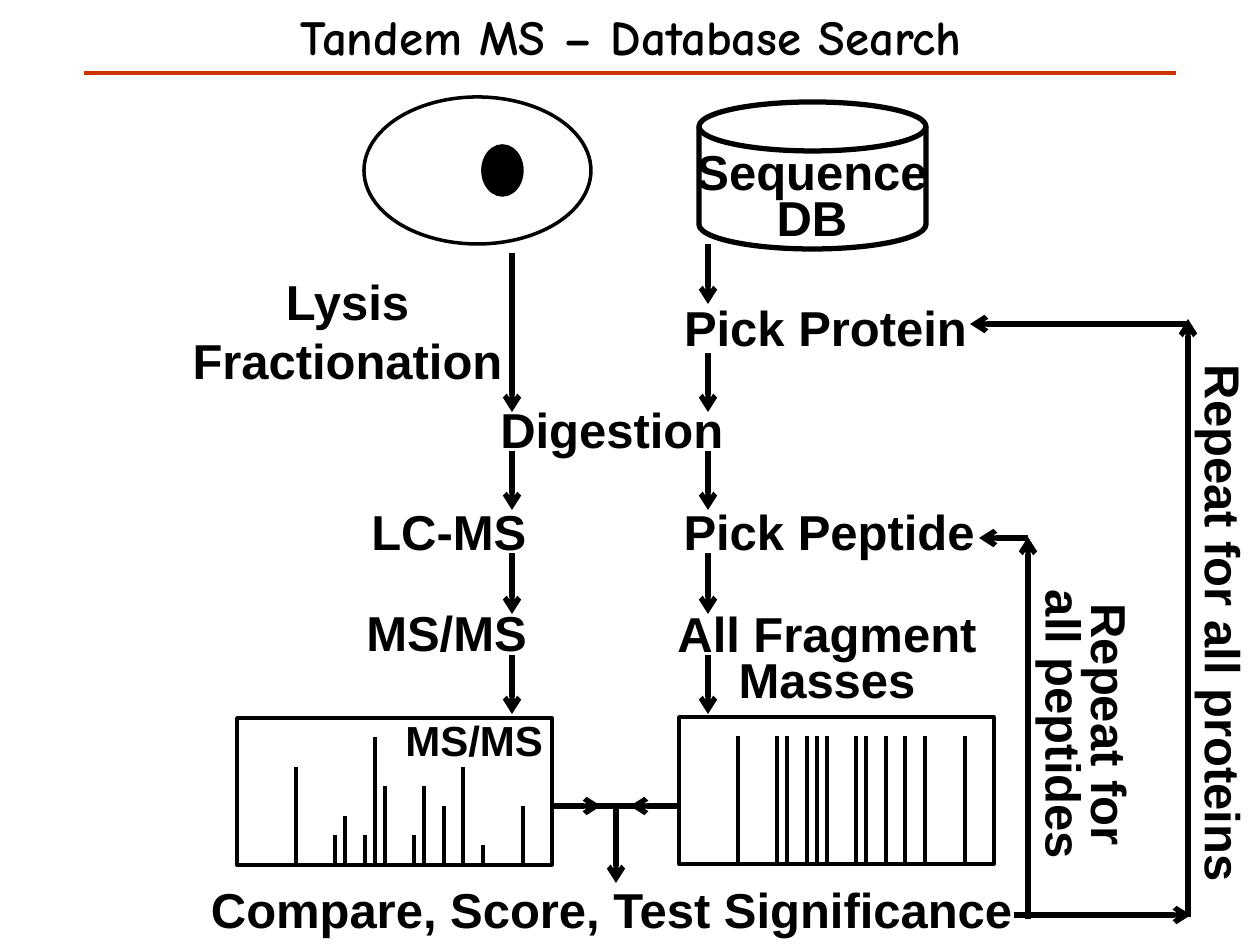
from dataclasses import dataclass

from lxml.etree import SubElement
from pptx import Presentation
from pptx.dml.color import RGBColor
from pptx.enum.shapes import MSO_CONNECTOR, MSO_SHAPE
from pptx.enum.text import MSO_ANCHOR, MSO_AUTO_SIZE, PP_ALIGN
from pptx.oxml.ns import qn
from pptx.util import Emu, Pt

PX = 914400 // 126  # EMU in one px


@dataclass(frozen=True)
class Theme:
    ink: RGBColor = RGBColor(0, 0, 0)
    rule: RGBColor = RGBColor(0xCC, 0x33, 0x00)
    font: str = "Arial"
    title_font: str = "Comic Neue"
    size: int = 28
    small: int = 24
    tight: int = 26
    thin: float = 2
    medium: float = 2.5
    thick: float = 3


def px(*lengths):
    return [Emu(n * PX) for n in lengths]


def write(tf, text, *, font, size, color, align=PP_ALIGN.CENTER, spacing=None):
    """Fill a text frame, one paragraph for each line of text."""
    tf.word_wrap = False
    tf.auto_size = MSO_AUTO_SIZE.SHAPE_TO_FIT_TEXT
    tf.vertical_anchor = MSO_ANCHOR.TOP
    for i, line in enumerate(text.split("\n")):
        p = tf.add_paragraph() if i else tf.paragraphs[0]
        p.alignment = align
        if spacing:
            p.line_spacing = Pt(spacing)
        r = p.add_run()
        r.text = line
        r.font.name, r.font.size, r.font.bold = font, Pt(size), True
        r.font.color.rgb = color


class Diagram:
    def __init__(self, slide, theme):
        self.s, self.theme = slide, theme

    def title(self, text, *box):
        sp = self.s.shapes.title
        sp.left, sp.top, sp.width, sp.height = px(*box)
        write(sp.text_frame, text, font=self.theme.title_font,
              size=self.theme.size, color=self.theme.ink)

    def label(self, text, *box, rotation=0, size=None, **fmt):
        sp = self.s.shapes.add_textbox(*px(*box))
        sp.rotation = rotation
        write(sp.text_frame, text, font=self.theme.font,
              size=size or self.theme.size, color=self.theme.ink, **fmt)

    def shape(self, kind, *box, width=None, filled=False):
        sp = self.s.shapes.add_shape(kind, *px(*box))
        sp.shadow.inherit = False
        if filled:
            sp.fill.solid()
            sp.fill.fore_color.rgb = self.theme.ink
        else:
            sp.fill.background()
        sp.line.color.rgb = self.theme.ink
        sp.line.width = Pt(width or self.theme.thin)

    def line(self, *ends, width=None, color=None, arrow=False):
        cxn = self.s.shapes.add_connector(MSO_CONNECTOR.STRAIGHT, *px(*ends))
        cxn.line.color.rgb = color or self.theme.ink
        cxn.line.width = Pt(width or self.theme.thick)
        if arrow:
            SubElement(cxn.line._get_or_add_ln(), qn("a:tailEnd"), type="arrow")
        SubElement(cxn._element.spPr, qn("a:effectLst"))

    def arrow(self, *ends):
        self.line(*ends, arrow=True)

    def spectrum(self, left, top, peaks):
        """Framed spectrum; peaks maps slot to height, both in steps."""
        width, height, margin, step = 315, 147, 59, 9.85
        self.shape(MSO_SHAPE.RECTANGLE, left, top, width, height)
        base = top + height
        for slot, steps in peaks.items():
            x = left + margin + round(slot * step)
            self.line(x, base - round(steps * step), x, base,
                      width=self.theme.thin)


def main():
    theme = Theme()
    prs = Presentation()
    prs.slide_width, prs.slide_height = px(1260, 945)
    d = Diagram(prs.slides.add_slide(prs.slide_layouts[5]), theme)

    # Title and rule
    d.title("Tandem MS – Database Search", 243, 0, 776, 72)
    d.line(84, 73, 1176, 73, width=theme.medium, color=theme.rule)

    # Cell and sequence database
    d.shape(MSO_SHAPE.OVAL, 364, 97, 227, 147)
    d.shape(MSO_SHAPE.OVAL, 483, 146, 39, 49, filled=True)
    d.shape(MSO_SHAPE.FLOWCHART_MAGNETIC_DISK, 699, 102, 227, 147,
            width=theme.thick)
    d.label("Sequence\nDB", 682, 149, 260, 105, spacing=theme.tight)

    # Steps of the experiment and of the search
    left = PP_ALIGN.LEFT
    d.label("Lysis\nFractionation", 178, 265, 339, 131)
    d.label("Digestion", 488, 393, 251, 72, align=left)
    d.label("LC-MS", 359, 495, 183, 72, align=left)
    d.label("MS/MS", 354, 596, 188, 72, align=left)
    d.label("Pick Protein", 670, 291, 311, 72)
    d.label("Pick Peptide", 669, 495, 320, 72)
    d.label("All Fragment\nMasses", 663, 611, 328, 105, spacing=theme.tight)
    d.label("Compare, Score, Test Significance", 193, 873, 837, 72)

    # Downward arrows of both columns
    shared = [(451, 510), (553, 614), (655, 714)]
    columns = {512: [(253, 412)], 708: [(244, 304), (353, 412)]}
    for x, first in columns.items():
        for start, end in first + shared:
            d.arrow(x, start, x, end)

    # Measured and predicted spectra
    measured = {0: 10, 4: 3, 5: 5, 7: 3, 8: 13, 9: 8,
                12: 3, 13: 8, 15: 6, 17: 10, 19: 2, 23: 6}
    d.spectrum(237, 718, measured)
    d.spectrum(679, 717, dict.fromkeys(measured, 13))
    d.label("MS/MS", 393, 708, 164, 64, size=theme.small, align=left)

    # Comparison
    d.arrow(552, 806, 601, 806)
    d.arrow(679, 806, 630, 806)
    d.line(640, 806, 591, 806)
    d.arrow(616, 808, 616, 883)

    # Loop over peptides
    d.arrow(1028, 919, 1028, 537)
    d.arrow(1028, 538, 979, 538)
    d.label("Repeat for\nall peptides", 932, 672, 297, 105, rotation=90,
            spacing=theme.tight)

    # Loop over proteins
    d.arrow(1014, 915, 1191, 915)
    d.arrow(1188, 917, 1188, 319)
    d.arrow(1187, 324, 970, 324)
    d.label("Repeat for all proteins", 950, 587, 548, 72, rotation=90)

    prs.save("out.pptx")


if __name__ == "__main__":
    main()
